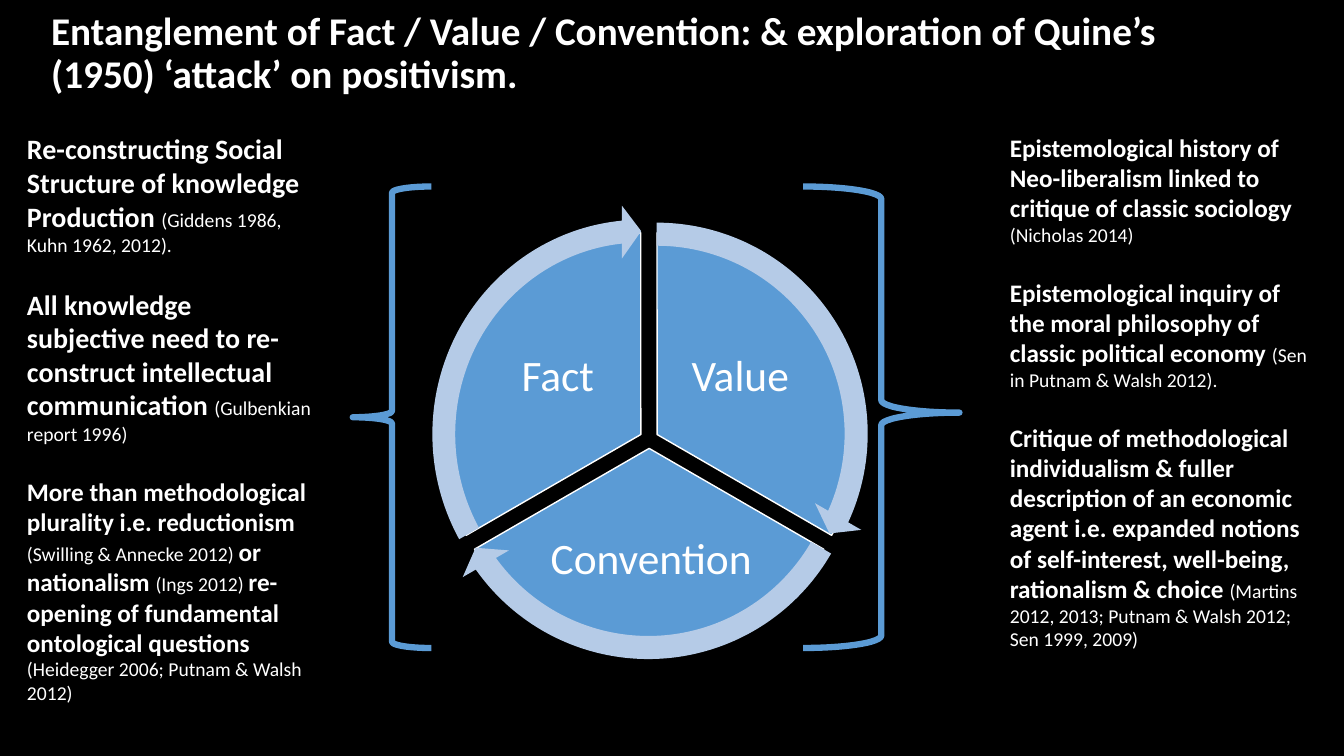
"""Build the slide on the entanglement of fact, value and convention."""
from dataclasses import dataclass

from pptx import Presentation
from pptx.dml.color import RGBColor
from pptx.enum.shapes import MSO_SHAPE
from pptx.enum.text import MSO_ANCHOR, MSO_AUTO_SIZE, PP_ALIGN
from pptx.shapes.autoshape import Shape
from pptx.slide import Slide
from pptx.text.text import TextFrame, _Paragraph
from pptx.util import Cm, Pt

COLORS = {
    "background": "000000",
    "text": "FFFFFF",
    "blue": "5B9BD5",
    "arrow": "B5CBE7",
}
FONT = "Calibri"
CITATION_SIZE = 14
PIE_SIZE = 10.16


@dataclass(frozen=True)
class Box:
    left: float
    top: float
    width: float
    height: float

    def lengths(self) -> tuple[Cm, Cm, Cm, Cm]:
        return Cm(self.left), Cm(self.top), Cm(self.width), Cm(self.height)


@dataclass(frozen=True)
class Sector:
    name: str
    pie_left: float
    pie_top: float
    pie_angles: tuple[float, float]
    label: Box
    arrow: Box
    arrow_angles: tuple[float, float]


@dataclass(frozen=True)
class Brace:
    kind: MSO_SHAPE
    box: Box
    adjustments: tuple[float, float]


@dataclass(frozen=True)
class Phrase:
    text: str
    size: int = CITATION_SIZE


@dataclass(frozen=True)
class Column:
    box: Box
    paragraphs: tuple[tuple[Phrase, ...], ...]


SECTORS = (
    Sector("Value", 11.48, 5.87, (162, 18), Box(16.84, 8, 3.63, 3.02),
           Box(10.85, 5.23, 11.4, 11.4), (14.72, 161.99)),
    Sector("Convention", 11.28, 6.22, (18, 90), Box(13.69, 12.8, 5.44, 2.67),
           Box(10.64, 5.59, 11.4, 11.4), (86.72, 18)),
    Sector("Fact", 11.07, 5.87, (90, 162), Box(12.24, 8, 3.63, 3.02),
           Box(10.52, 5.16, 11.28, 11.56), (158.73, 90)),
)

BRACES = (
    Brace(MSO_SHAPE.RIGHT_BRACE, Box(20.24, 4.7, 3.94, 11.63), (0.08, 0.49)),
    Brace(MSO_SHAPE.LEFT_BRACE, Box(8.89, 4.7, 1.98, 11.63), (0.08, 0.5)),
)

COLUMNS = (
    Column(Box(0.43, 3.2, 7.72, 15), (
        (Phrase("Re-constructing Social Structure of knowledge Production ", 20),
         Phrase("(Giddens 1986, Kuhn 1962, 2012).")),
        (Phrase("All knowledge subjective need to re-construct intellectual "
                "communication ", 20),
         Phrase("(Gulbenkian report 1996)")),
        (Phrase("More than methodological plurality i.e. reductionism ", 18),
         Phrase("(Swilling & Annecke 2012) "),
         Phrase("or nationalism ", 18),
         Phrase("(Ings 2012) "),
         Phrase("re-opening of fundamental ontological questions ", 18),
         Phrase("(Heidegger 2006; Putnam & Walsh 2012)")),
    )),
    Column(Box(25.2, 3.2, 8.23, 13.41), (
        (Phrase("Epistemological history of Neo-liberalism linked to critique of "
                "classic sociology", 18),
         Phrase(" (Nicholas 2014)")),
        (Phrase("Epistemological inquiry of the moral philosophy of classic "
                "political economy ", 18),
         Phrase("(Sen in Putnam & Walsh 2012).")),
        (Phrase("Critique of methodological individualism & fuller description of "
                "an economic agent i.e. expanded notions of self-interest, "
                "well-being, rationalism & choice ", 18),
         Phrase("(Martins 2012, 2013; Putnam & Walsh 2012; Sen 1999, 2009)")),
    )),
)


def color(name: str) -> RGBColor:
    return RGBColor.from_string(COLORS[name])


def add_text_frame(slide: Slide, box: Box) -> TextFrame:
    frame = slide.shapes.add_textbox(*box.lengths()).text_frame
    frame.word_wrap = True
    return frame


def style_paragraph(paragraph: _Paragraph) -> None:
    paragraph.font.name = FONT
    paragraph.font.color.rgb = color("text")


def add_line_of_text(slide: Slide, box: Box, text: str, size: int) -> TextFrame:
    frame = add_text_frame(slide, box)
    frame.vertical_anchor = MSO_ANCHOR.MIDDLE
    paragraph = frame.paragraphs[0]
    paragraph.text = text
    paragraph.line_spacing = 0.9
    style_paragraph(paragraph)
    paragraph.font.size = Pt(size)
    return frame


def add_title(slide: Slide) -> None:
    frame = add_line_of_text(
        slide, Box(1.04, -0.05, 30.61, 2.84),
        "Entanglement of Fact / Value / Convention: & exploration of Quine’s "
        "(1950) ‘attack’ on positivism.", 28)
    frame.paragraphs[0].font.bold = True


def add_preset(slide: Slide, kind: MSO_SHAPE, box: Box,
               adjustments: tuple[float, ...]) -> Shape:
    shape = slide.shapes.add_shape(kind, *box.lengths())
    shape.shadow.inherit = False
    for index, value in enumerate(adjustments):
        shape.adjustments[index] = value
    return shape


def add_sector(slide: Slide, sector: Sector) -> None:
    pie_box = Box(sector.pie_left, sector.pie_top, PIE_SIZE, PIE_SIZE)
    pie = add_preset(slide, MSO_SHAPE.PIE, pie_box, sector.pie_angles)
    pie.fill.solid()
    pie.fill.fore_color.rgb = color("blue")
    pie.line.color.rgb = color("text")
    pie.line.width = Pt(1)

    frame = add_line_of_text(slide, sector.label, sector.name, 31)
    frame.margin_left = frame.margin_right = Cm(0.1)
    frame.margin_top = frame.margin_bottom = Cm(0.1)
    frame.paragraphs[0].alignment = PP_ALIGN.CENTER


def add_cycle_arrow(slide: Slide, sector: Sector) -> None:
    adjustments = (0.051, 3.275, *sector.arrow_angles, 0.059)
    arrow = add_preset(slide, MSO_SHAPE.CIRCULAR_ARROW, sector.arrow, adjustments)
    arrow.fill.solid()
    arrow.fill.fore_color.rgb = color("arrow")
    arrow.line.fill.background()


def add_brace(slide: Slide, brace: Brace) -> None:
    shape = add_preset(slide, brace.kind, brace.box, brace.adjustments)
    shape.fill.background()
    shape.line.color.rgb = color("blue")
    shape.line.width = Pt(4.5)


def add_column(slide: Slide, column: Column) -> None:
    frame = add_text_frame(slide, column.box)
    frame.auto_size = MSO_AUTO_SIZE.SHAPE_TO_FIT_TEXT
    for index, phrases in enumerate(column.paragraphs):
        paragraph = frame.add_paragraph() if index else frame.paragraphs[0]
        paragraph.space_before = Pt(22 if index else 0)
        style_paragraph(paragraph)
        for phrase in phrases:
            run = paragraph.add_run()
            run.text = phrase.text
            run.font.size = Pt(phrase.size)
            run.font.bold = phrase.size > CITATION_SIZE


def main() -> None:
    presentation = Presentation()
    presentation.slide_width, presentation.slide_height = Cm(33.87), Cm(19.05)
    slide = presentation.slides.add_slide(presentation.slide_layouts[6])
    slide.background.fill.solid()
    slide.background.fill.fore_color.rgb = color("background")
    add_title(slide)
    for draw, items in ((add_sector, SECTORS), (add_cycle_arrow, SECTORS),
                        (add_brace, BRACES), (add_column, COLUMNS)):
        for item in items:
            draw(slide, item)
    presentation.save("out.pptx")


if __name__ == "__main__":
    main()
